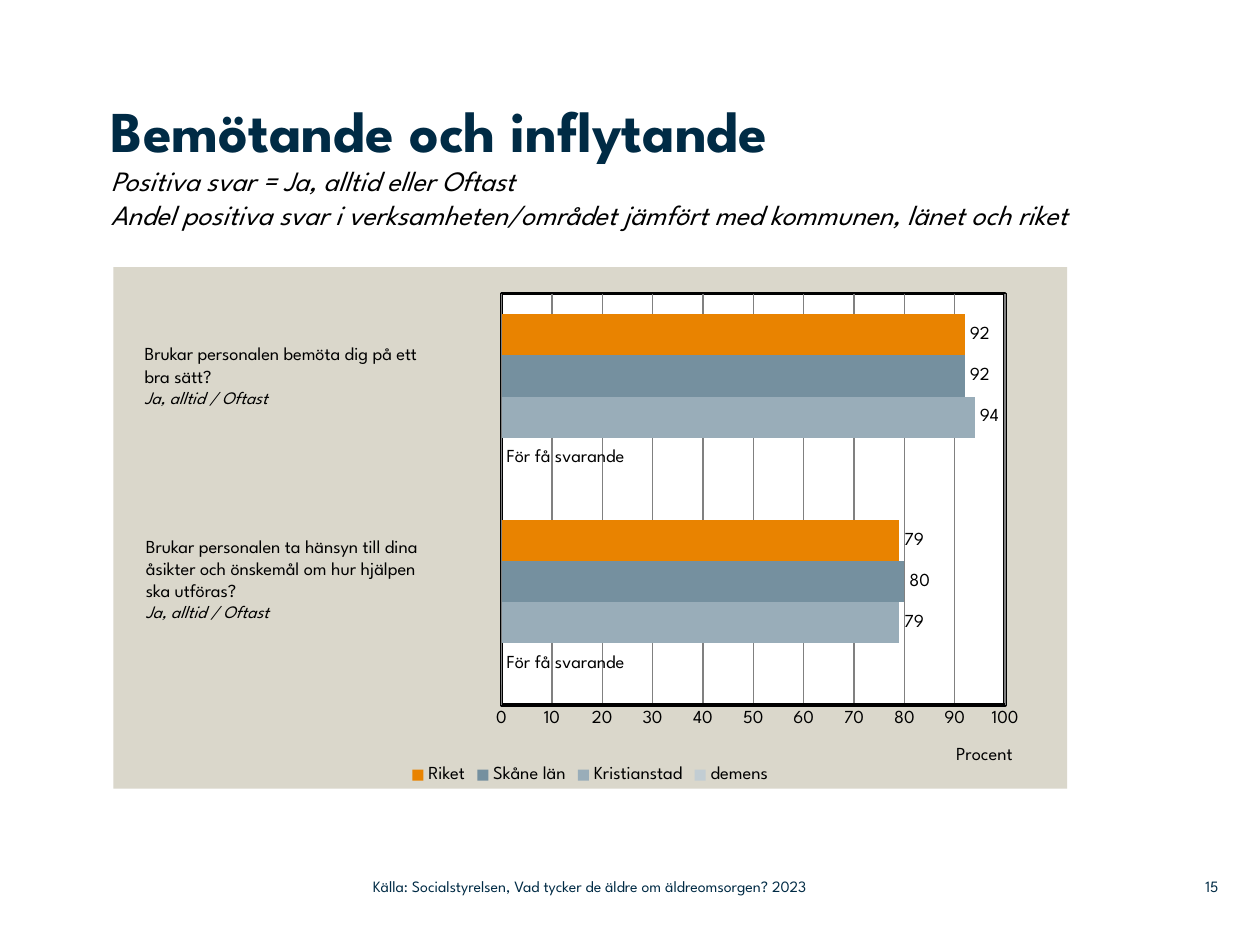
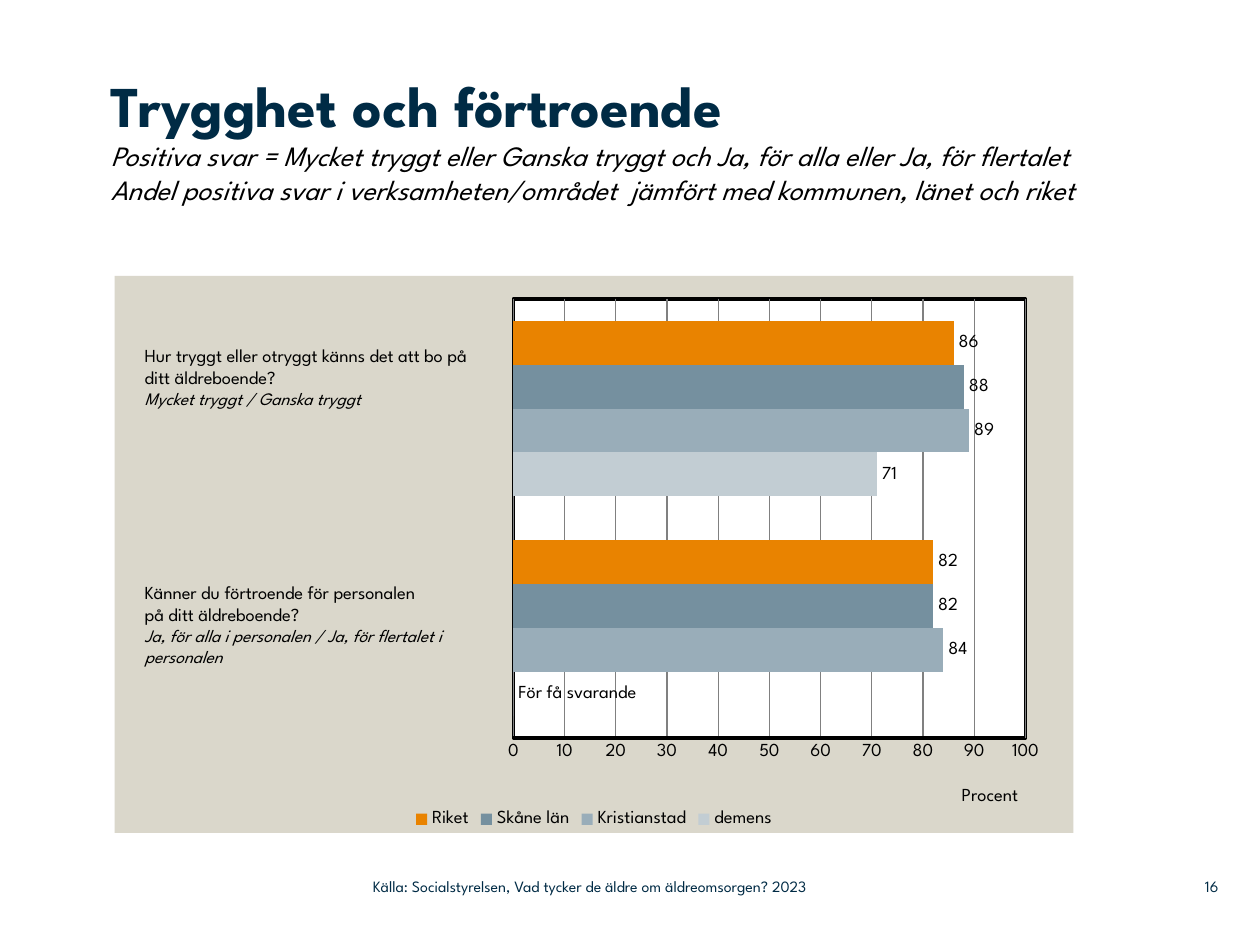
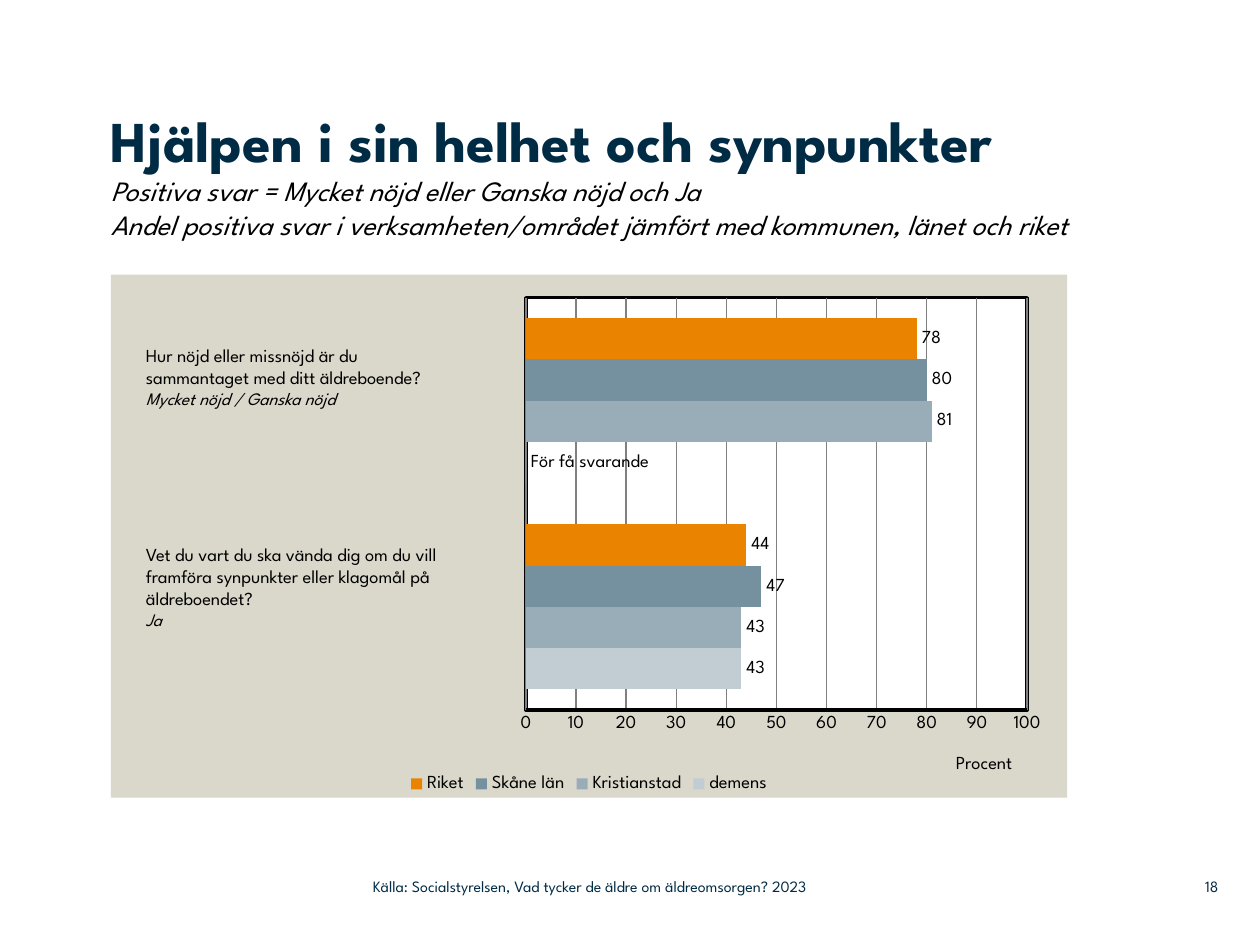
from dataclasses import dataclass

import lxml.etree
import pptx
import pptx.chart.chart
import pptx.chart.data
import pptx.dml.color
import pptx.enum.chart
import pptx.enum.text
import pptx.oxml.ns
import pptx.presentation
import pptx.slide
import pptx.text.text
import pptx.util

Inches = pptx.util.Inches
Pt = pptx.util.Pt
qn = pptx.oxml.ns.qn

FONT = "League Spartan"
COLORS = {
    "navy": "002B45",
    "black": "000000",
    "white": "FFFFFF",
    "panel": "DAD7CB",
    "grid": "808080",
}
SERIES_COLORS = {
    "demens": "C2CDD3",
    "Kristianstad": "99ADB9",
    "Skåne län": "75909F",
    "Riket": "E98300",
}
SOURCE = "Källa: Socialstyrelsen, Vad tycker de äldre om äldreomsorgen? 2023"
TOO_FEW = "För få svarande"
TITLE_LEFT = 0.88
PROCENT_PLACE = {"x": 0.88, "y": 0.91}


@dataclass(frozen=True)
class Area:
    left: float
    top: float
    width: float
    height: float

    def lengths(self) -> list[int]:
        return [Inches(value) for value in (self.left, self.top, self.width, self.height)]


@dataclass(frozen=True)
class Question:
    area: Area
    lines: list[str]
    answer: str


@dataclass(frozen=True)
class ResultPage:
    number: int
    heading: str
    subtitle: list[str]
    title_area: Area
    chart_area: Area
    plot: Area
    values: dict[str, tuple[int, int]]
    questions: list[Question]


NUMBER_AREA = Area(9.2, 6.89, 0.47, 0.29)
SOURCE_AREA = Area(2.96, 6.89, 4.43, 0.29)

PAGES = [
    ResultPage(
        15,
        "Bemötande och inflytande",
        [
            "Positiva svar = Ja, alltid eller Oftast",
            "Andel positiva svar i verksamheten/området jämfört med kommunen, länet och riket",
        ],
        Area(TITLE_LEFT, 0.75, 8.04, 1.2),
        Area(0.9, 2.12, 7.57, 4.14),
        Area(0.407, 0.051, 0.528, 0.789),
        {"demens": (0, 0), "Kristianstad": (79, 94), "Skåne län": (80, 92), "Riket": (79, 92)},
        [
            Question(
                Area(1.05, 2.67, 2.97, 0.81),
                ["Brukar personalen bemöta dig på ett", "bra sätt?"],
                "Ja, alltid / Oftast",
            ),
            Question(
                Area(1.06, 4.2, 3.01, 0.98),
                [
                    "Brukar personalen ta hänsyn till dina",
                    "åsikter och önskemål om hur hjälpen",
                    "ska utföras?",
                ],
                "Ja, alltid / Oftast",
            ),
        ],
    ),
    ResultPage(
        16,
        "Trygghet och förtroende",
        [
            "Positiva svar = Mycket tryggt eller Ganska tryggt och Ja, för alla eller Ja, för flertalet",
            "Andel positiva svar i verksamheten/området  jämfört med kommunen, länet och riket",
        ],
        Area(TITLE_LEFT, 0.55, 7.75, 1.64),
        Area(0.91, 2.19, 7.61, 4.42),
        Area(0.416, 0.041, 0.534, 0.789),
        {"demens": (0, 71), "Kristianstad": (84, 89), "Skåne län": (82, 88), "Riket": (82, 86)},
        [
            Question(
                Area(1.05, 2.68, 2.98, 0.81),
                ["Hur tryggt eller otryggt känns det att bo på ditt äldreboende?"],
                "Mycket tryggt / Ganska tryggt",
            ),
            Question(
                Area(1.05, 4.56, 3, 0.98),
                ["Känner du förtroende för personalen", "på ditt äldreboende?"],
                "Ja, för alla i personalen / Ja, för flertalet i personalen",
            ),
        ],
    ),
    ResultPage(
        18,
        "Hjälpen i sin helhet och synpunkter",
        [
            "Positiva svar = Mycket nöjd eller Ganska nöjd och Ja",
            "Andel positiva svar i verksamheten/området jämfört med kommunen, länet och riket",
        ],
        Area(TITLE_LEFT, 0.83, 7.79, 1.34),
        Area(0.88, 2.18, 7.59, 4.15),
        Area(0.434, 0.044, 0.524, 0.789),
        {"demens": (43, 0), "Kristianstad": (43, 81), "Skåne län": (47, 80), "Riket": (44, 78)},
        [
            Question(
                Area(1.06, 2.68, 3.1, 0.81),
                ["Hur nöjd eller missnöjd är du", "sammantaget med ditt äldreboende?"],
                "Mycket nöjd / Ganska nöjd",
            ),
            Question(
                Area(1.06, 4.26, 3.05, 0.81),
                ["Vet du vart du ska vända dig om du vill framföra synpunkter eller klagomål på äldreboendet?"],
                "Ja",
            ),
        ],
    ),
]


def rgb(value: str) -> pptx.dml.color.RGBColor:
    return pptx.dml.color.RGBColor.from_string(value)


def style_font(
    font: pptx.text.text.Font,
    size: float,
    color: str = "black",
    bold: bool = False,
    italic: bool = False,
) -> None:
    font.name = FONT
    font.size = Pt(size)
    font.bold = bold
    font.italic = italic
    font.color.rgb = rgb(COLORS[color])


def add_span(para, text: str, size: float, color: str = "black", **style: bool) -> None:
    span = para.add_run()
    span.text = text
    style_font(span.font, size, color, **style)


def clear_margins(frame: pptx.text.text.TextFrame) -> None:
    frame.margin_left = frame.margin_top = frame.margin_right = frame.margin_bottom = 0


def add_title(page: pptx.slide.Slide, result: ResultPage) -> None:
    title = page.shapes.title
    title.left, title.top, title.width, title.height = result.title_area.lengths()
    frame = title.text_frame
    clear_margins(frame)
    frame.word_wrap = True
    frame.auto_size = pptx.enum.text.MSO_AUTO_SIZE.NONE
    frame.vertical_anchor = pptx.enum.text.MSO_ANCHOR.TOP
    para = frame.paragraphs[0]
    para.alignment = pptx.enum.text.PP_ALIGN.LEFT
    add_span(para, result.heading, 33, "navy", bold=True)
    for line in result.subtitle:
        para.add_line_break()
        add_span(para, line, 16, italic=True)


def add_question(page: pptx.slide.Slide, question: Question) -> None:
    frame = page.shapes.add_textbox(*question.area.lengths()).text_frame
    frame.word_wrap = True
    para = frame.paragraphs[0]
    for line in question.lines:
        add_span(para, line, 10.5)
        para = frame.add_paragraph()
    add_span(para, question.answer, 10, italic=True)


def add_footer(page: pptx.slide.Slide, area: Area, text: str, alignment) -> None:
    frame = page.shapes.add_textbox(*area.lengths()).text_frame
    clear_margins(frame)
    frame.word_wrap = True
    frame.vertical_anchor = pptx.enum.text.MSO_ANCHOR.MIDDLE
    para = frame.paragraphs[0]
    para.alignment = alignment
    add_span(para, text, 9, "navy")


def set_layout(parent, places: dict[str, float], inner: bool = False) -> None:
    layout = parent.find(qn("c:layout"))
    if layout is None:
        layout = lxml.etree.Element(qn("c:layout"))
        parent.insert(0, layout)
    manual = lxml.etree.SubElement(layout, qn("c:manualLayout"))
    settings = {"layoutTarget": "inner"} if inner else {}
    settings |= {"xMode": "edge", "yMode": "edge"}
    settings |= {name: str(value) for name, value in places.items()}
    for name, value in settings.items():
        lxml.etree.SubElement(manual, qn(f"c:{name}")).set("val", value)


def add_solid_fill(parent, color: str) -> None:
    fill = lxml.etree.SubElement(parent, qn("a:solidFill"))
    lxml.etree.SubElement(fill, qn("a:srgbClr")).set("val", COLORS[color])


def area_style(fill: str, border: str | None = None):
    properties = lxml.etree.Element(qn("c:spPr"))
    add_solid_fill(properties, fill)
    line = lxml.etree.SubElement(properties, qn("a:ln"))
    if border:
        line.set("w", str(Pt(2)))
        add_solid_fill(line, border)
    else:
        lxml.etree.SubElement(line, qn("a:noFill"))
    return properties


def style_axes(chart: pptx.chart.chart.Chart) -> None:
    chart.category_axis.visible = False
    axis = chart.value_axis
    axis.minimum_scale = 0
    axis.maximum_scale = 100
    axis.major_unit = 10
    axis.major_tick_mark = pptx.enum.chart.XL_TICK_MARK.NONE
    axis.format.line.color.rgb = rgb(COLORS["black"])
    axis.format.line.width = Pt(2)
    axis.has_major_gridlines = True
    axis.major_gridlines.format.line.color.rgb = rgb(COLORS["grid"])
    axis.major_gridlines.format.line.width = Pt(0.75)
    style_font(axis.tick_labels.font, 10.5)
    title = axis.axis_title
    add_span(title.text_frame.paragraphs[0], "Procent", 10.5)
    set_layout(title.element if hasattr(title, "element") else title._element, PROCENT_PLACE)


def style_series(chart: pptx.chart.chart.Chart) -> None:
    outside = pptx.enum.chart.XL_LABEL_POSITION.OUTSIDE_END
    for series in chart.plots[0].series:
        series.format.fill.solid()
        series.format.fill.fore_color.rgb = rgb(SERIES_COLORS[series.name])
        series.invert_if_negative = False
        labels = series.data_labels
        labels.show_value = True
        labels.position = outside
        style_font(labels.font, 10.5)
        for index, value in enumerate(series.values):
            if value == 0:
                label = series.points[index].data_label
                add_span(label.text_frame.paragraphs[0], TOO_FEW, 10.5)
                label.position = outside


def add_result_chart(page: pptx.slide.Slide, result: ResultPage) -> None:
    data = pptx.chart.data.CategoryChartData(number_format="0")
    data.categories = ["1", "2"]
    for name, values in result.values.items():
        data.add_series(name, values)
    kind = pptx.enum.chart.XL_CHART_TYPE.BAR_CLUSTERED
    chart = page.shapes.add_chart(kind, *result.chart_area.lengths(), data).chart
    style_font(chart.font, 10.5)
    chart.has_title = False
    chart.has_legend = True
    chart.legend.position = pptx.enum.chart.XL_LEGEND_POSITION.BOTTOM
    chart.legend.include_in_layout = False
    style_font(chart.legend.font, 10.5)
    chart.plots[0].gap_width = 100
    chart.plots[0].overlap = 0
    chart.plots[0].vary_by_categories = False
    style_axes(chart)
    style_series(chart)
    body = chart.element.find(qn("c:chart"))
    body.addnext(area_style("panel"))
    plot_area = body.find(qn("c:plotArea"))
    plot_area.append(area_style("white", "black"))
    plot = result.plot
    set_layout(plot_area, {"x": plot.left, "y": plot.top, "w": plot.width, "h": plot.height}, inner=True)


def add_result_page(deck: pptx.presentation.Presentation, result: ResultPage) -> None:
    page = deck.slides.add_slide(deck.slide_layouts[5])
    add_result_chart(page, result)
    add_title(page, result)
    for question in result.questions:
        add_question(page, question)
    add_footer(page, NUMBER_AREA, str(result.number), pptx.enum.text.PP_ALIGN.RIGHT)
    add_footer(page, SOURCE_AREA, SOURCE, pptx.enum.text.PP_ALIGN.LEFT)


def main() -> None:
    deck = pptx.Presentation()
    deck.slide_width = Inches(10)
    deck.slide_height = Inches(7.5)
    for result in PAGES:
        add_result_page(deck, result)
    deck.save("out.pptx")


if __name__ == "__main__":
    main()
